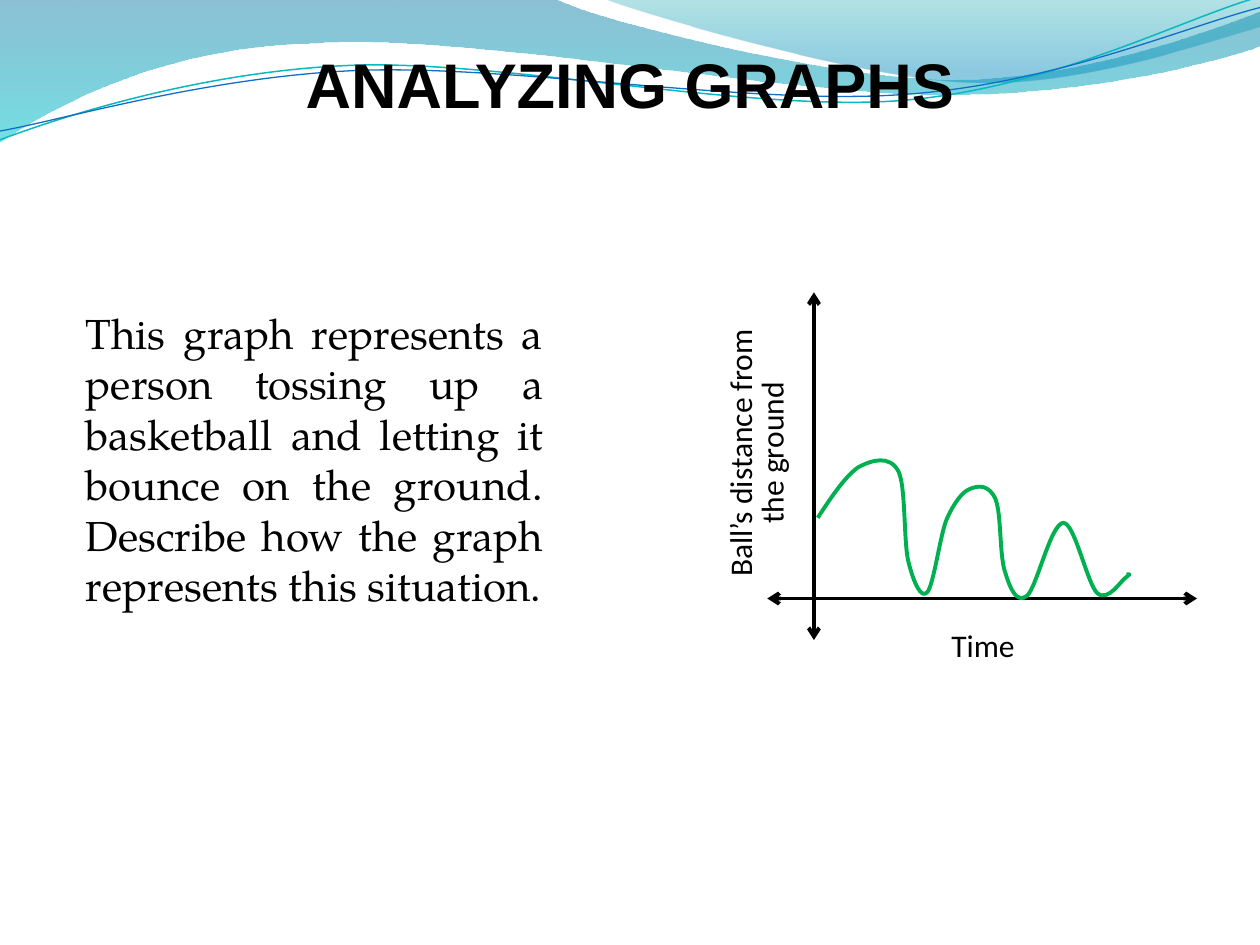
from pptx import Presentation
from pptx.dml.color import RGBColor
from pptx.enum.shapes import MSO_CONNECTOR
from pptx.enum.text import MSO_ANCHOR, MSO_AUTO_SIZE, PP_ALIGN
from pptx.oxml.ns import qn
from pptx.util import Inches, Pt
from lxml.etree import SubElement

BLACK = RGBColor(0x00, 0x00, 0x00)
GREEN = RGBColor(0x00, 0xB0, 0x50)
AQUA = RGBColor(0x0A, 0xB8, 0xBF)
BLUE = RGBColor(0x0F, 0x6F, 0xC6)
DEEP = RGBColor(0x00, 0x74, 0xA1)
CYAN = RGBColor(0x00, 0xC6, 0xCF)
TEAL = RGBColor(0x00, 0xA1, 0xA9)
SEA = RGBColor(0x00, 0x8B, 0xBF)

WAVE = [
    (0, 0), (4.4, -0.01),
    (4.76, 0.17, 6.64, 0.63, 7.58, 0.63), (8.53, 0.63, 9.58, 0.26, 10, 0.09),
    (10.01, 0.36),
    (9.83, 0.44, 8.7, 0.76, 7.46, 0.75), (6.22, 0.75, 3.82, 0.28, 2.57, 0.34),
    (1.29, 0.36, 0.46, 0.83, -0.01, 1.13),
]
CREST = [
    (4.79, -0.01),
    (5.09, 0.11, 6.82, 0.62, 7.69, 0.65), (8.56, 0.69, 9.61, 0.32, 10, 0.21),
    (10, 0),
]
UPPER = [
    (0, 1.11),
    (0.48, 0.93, 1.58, 0.57, 2.77, 0.52), (3.95, 0.47, 5.93, 0.89, 7.13, 0.8),
    (8.33, 0.71, 9.38, 0.15, 9.98, -0.02),
]
LOWER = [
    (0, 1.04),
    (0.47, 0.96, 1.64, 0.61, 2.83, 0.56), (4.03, 0.51, 5.97, 0.84, 7.17, 0.75),
    (8.36, 0.67, 9.41, 0.21, 10, 0.06),
]
BOUNCE = [
    (6.49, 4.11),
    (6.6, 3.94, 6.71, 3.78, 6.81, 3.71), (6.92, 3.65, 7.06, 3.61, 7.13, 3.74),
    (7.19, 3.86, 7.17, 4.3, 7.21, 4.46), (7.25, 4.62, 7.31, 4.76, 7.36, 4.7),
    (7.41, 4.64, 7.46, 4.26, 7.51, 4.13), (7.57, 3.99, 7.64, 3.9, 7.7, 3.88),
    (7.77, 3.85, 7.85, 3.85, 7.9, 3.96), (7.95, 4.08, 7.93, 4.42, 7.98, 4.55),
    (8.02, 4.68, 8.07, 4.79, 8.15, 4.73), (8.23, 4.66, 8.34, 4.15, 8.44, 4.15),
    (8.53, 4.15, 8.63, 4.64, 8.71, 4.71), (8.8, 4.78, 8.9, 4.6, 8.94, 4.58),
    (8.98, 4.55, 8.96, 4.56, 8.94, 4.56),
]


def outline(slide, parts, close=False):
    """Build a freeform whose six-number parts are cubic curves."""
    start, *rest = parts
    spots = [(Inches(x), Inches(y)) for part in rest
             for x, y in zip(part[::2], part[1::2])]
    pen = slide.shapes.build_freeform(Inches(start[0]), Inches(start[1]))
    shape = pen.add_line_segments(spots, close=close).convert_to_shape()
    steps = iter(list(shape.element.iter(qn("a:lnTo"))))
    for part in rest:
        first = next(steps)
        if len(part) == 6:
            curve = first.makeelement(qn("a:cubicBezTo"))
            first.addprevious(curve)
            for step in (first, next(steps), next(steps)):
                curve.append(step[0])
                step.getparent().remove(step)
    shape.shadow.inherit = False
    return shape


def band(slide, parts, stops):
    """Draw a closed wave with a see-through vertical gradient."""
    shape = outline(slide, parts, close=True)
    shape.line.fill.background()
    shape.fill.gradient()
    shape.fill.gradient_angle = 270
    for stop, (place, color, alpha) in zip(shape.fill.gradient_stops, stops):
        stop.position = place
        stop.color.rgb = color
    for node, (_, _, alpha) in zip(shape.element.iter(qn("a:srgbClr")), stops):
        SubElement(node, qn("a:alpha")).set("val", str(alpha * 1000))


def stroke(slide, parts, color, width):
    """Draw an open curve."""
    shape = outline(slide, parts)
    shape.fill.background()
    shape.line.color.rgb = color
    shape.line.width = Pt(width)


def axis(slide, x1, y1, x2, y2):
    """Draw a line with an arrowhead at each end."""
    line = slide.shapes.add_connector(
        MSO_CONNECTOR.STRAIGHT, Inches(x1), Inches(y1), Inches(x2), Inches(y2))
    line.line.color.rgb = BLACK
    line.line.width = Pt(2.25)
    for end in ("a:headEnd", "a:tailEnd"):
        SubElement(line.line._ln, qn(end)).set("type", "arrow")
    SubElement(line.element.spPr, qn("a:effectLst"))


def write(shape, text, box, font="Calibri", size=18, bold=False,
          align=PP_ALIGN.CENTER, anchor=MSO_ANCHOR.TOP, space=None, turn=0,
          fit=MSO_AUTO_SIZE.SHAPE_TO_FIT_TEXT):
    """Place a shape and fill it with one formatted paragraph."""
    shape.left, shape.top, shape.width, shape.height = map(Inches, box)
    shape.rotation = turn
    frame = shape.text_frame
    frame.word_wrap = True
    frame.auto_size = fit
    frame.vertical_anchor = anchor
    para = frame.paragraphs[0]
    para.alignment = align
    para.space_before = Pt(0)
    if space:
        para.line_spacing = Pt(space)
    run = para.add_run()
    run.text = text
    run.font.name = font
    run.font.size = Pt(size)
    run.font.bold = bold
    run.font.color.rgb = BLACK


def label(slide, text, box, **style):
    """Add a text box."""
    write(slide.shapes.add_textbox(0, 0, 0, 0), text, box, **style)


def plain(shape):
    """Take the bullet and indent off a body placeholder."""
    props = shape.text_frame.paragraphs[0]._p.get_or_add_pPr()
    props.set("marL", "0")
    props.set("indent", "0")
    SubElement(props, qn("a:buNone"))


def raise_top(shape):
    """Bring a shape to the front."""
    shape.element.getparent().append(shape.element)


def main():
    """Build the slide."""
    deck = Presentation()
    deck.slide_width, deck.slide_height = Inches(10), Inches(7.5)
    slide = deck.slides.add_slide(deck.slide_layouts[1])
    title, body = slide.placeholders

    band(slide, WAVE, [(0, DEEP, 45), (1, CYAN, 55)])
    band(slide, CREST, [(0, TEAL, 30), (0.8, SEA, 45)])
    stroke(slide, UPPER, AQUA, 0.85)
    stroke(slide, LOWER, BLUE, 0.75)

    write(body, "This graph represents a person tossing up a basketball and "
          "letting it bounce on the ground. Describe how the graph represents "
          "this situation.", (0.58, 2.39, 3.83, 2.52),
          font="TeX Gyre Pagella", size=24, align=PP_ALIGN.JUSTIFY)
    plain(body)
    raise_top(body)

    axis(slide, 6.46, 2.32, 6.46, 5.08)
    axis(slide, 9.5, 4.75, 6.09, 4.75)
    label(slide, "Time ", (6.83, 4.92, 2, 0.4))
    label(slide, "Ball’s distance from the ground", (4.75, 3.29, 2.55, 0.61),
          space=18, turn=270)
    stroke(slide, BOUNCE, GREEN, 2.25)

    write(title, "ANALYZING GRAPHS", (0, 0.25, 10, 0.83), font="Arial",
          size=36, bold=True, anchor=MSO_ANCHOR.MIDDLE, fit=MSO_AUTO_SIZE.NONE)
    raise_top(title)
    deck.save("out.pptx")


if __name__ == "__main__":
    main()
